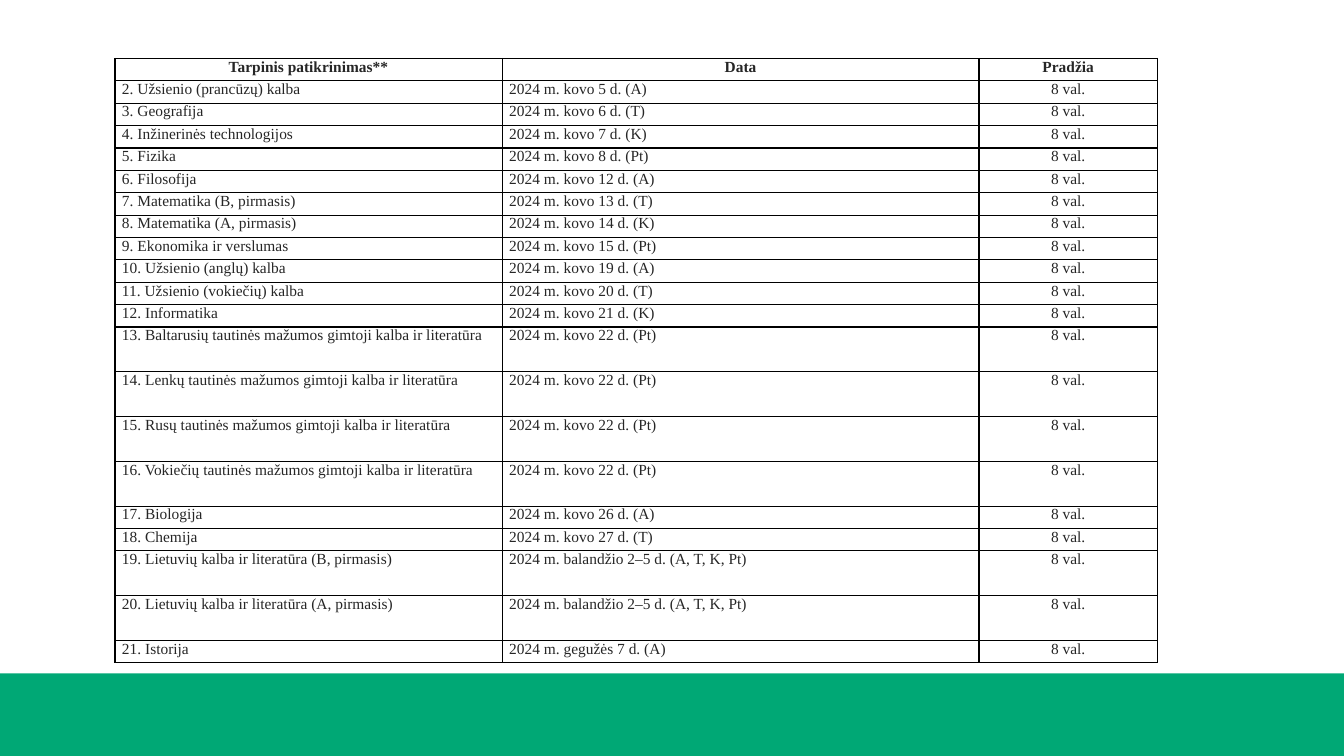
from lxml.etree import SubElement
from pptx import Presentation
from pptx.dml.color import RGBColor
from pptx.enum.shapes import MSO_SHAPE
from pptx.enum.text import PP_ALIGN
from pptx.oxml.ns import qn
from pptx.util import Inches, Pt

GREEN = RGBColor(0x00, 0xA8, 0x75)
INK = RGBColor(0x26, 0x26, 0x26)
BLACK = RGBColor(0x00, 0x00, 0x00)

HEADINGS = ("Tarpinis patikrinimas**", "Data", "Pradžia")
START = "8 val."
FIRST_NUMBER = 2
CHECKS = [
    ("Užsienio (prancūzų) kalba", "kovo 5 d. (A)"),
    ("Geografija", "kovo 6 d. (T)"),
    ("Inžinerinės technologijos", "kovo 7 d. (K)"),
    ("Fizika", "kovo 8 d. (Pt)"),
    ("Filosofija", "kovo 12 d. (A)"),
    ("Matematika (B, pirmasis)", "kovo 13 d. (T)"),
    ("Matematika (A, pirmasis)", "kovo 14 d. (K)"),
    ("Ekonomika ir verslumas", "kovo 15 d. (Pt)"),
    ("Užsienio (anglų) kalba", "kovo 19 d. (A)"),
    ("Užsienio (vokiečių) kalba", "kovo 20 d. (T)"),
    ("Informatika", "kovo 21 d. (K)"),
    ("Baltarusių tautinės mažumos gimtoji kalba ir literatūra", "kovo 22 d. (Pt)"),
    ("Lenkų tautinės mažumos gimtoji kalba ir literatūra", "kovo 22 d. (Pt)"),
    ("Rusų tautinės mažumos gimtoji kalba ir literatūra", "kovo 22 d. (Pt)"),
    ("Vokiečių tautinės mažumos gimtoji kalba ir literatūra", "kovo 22 d. (Pt)"),
    ("Biologija", "kovo 26 d. (A)"),
    ("Chemija", "kovo 27 d. (T)"),
    ("Lietuvių kalba ir literatūra (B, pirmasis)", "balandžio 2–5 d. (A, T, K, Pt)"),
    ("Lietuvių kalba ir literatūra (A, pirmasis)", "balandžio 2–5 d. (A, T, K, Pt)"),
    ("Istorija", "gegužės 7 d. (A)"),
]


class ScheduleSlide:
    """Holds the text style and the slide being filled."""

    font_name = "Times New Roman"
    font_size = Pt(11)
    side_margin = Inches(0.07)
    border_width = Pt(1)

    def __init__(self, slide):
        self.slide = slide

    def band(self, left, top, width, height, color):
        band = self.slide.shapes.add_shape(MSO_SHAPE.RECTANGLE, left, top, width, height)
        band.shadow.inherit = False
        band.fill.solid()
        band.fill.fore_color.rgb = color
        band.line.fill.background()

    def table(self, left, top, rows, widths, heights):
        table = self.slide.shapes.add_table(
            len(rows), len(widths), left, top, sum(widths), sum(heights)).table
        table.horz_banding = False
        for column, width in zip(table.columns, widths):
            column.width = width
        for index, (row, height, texts) in enumerate(zip(table.rows, heights, rows)):
            row.height = height
            for column, (cell, text) in enumerate(zip(row.cells, texts)):
                is_heading = index == 0
                centred = is_heading or column == len(widths) - 1
                self.cell(cell, text, is_heading, centred)

    def cell(self, cell, text, bold, centred):
        cell.margin_left = cell.margin_right = self.side_margin
        cell.margin_top = cell.margin_bottom = 0
        self.borders(cell)
        cell.fill.background()
        cell.text = text
        paragraph = cell.text_frame.paragraphs[0]
        paragraph.alignment = PP_ALIGN.CENTER if centred else PP_ALIGN.LEFT
        font = paragraph.font
        font.name = self.font_name
        font.size = self.font_size
        font.bold = bold
        font.color.rgb = INK

    def borders(self, cell):
        properties = cell._tc.get_or_add_tcPr()
        for side in ("a:lnL", "a:lnR", "a:lnT", "a:lnB"):
            line = SubElement(properties, qn(side), w=str(self.border_width))
            fill = SubElement(line, qn("a:solidFill"))
            SubElement(fill, qn("a:srgbClr"), val=str(BLACK))


def main():
    deck = Presentation()
    deck.slide_width, deck.slide_height = Inches(13.33), Inches(7.5)
    blank = deck.slide_layouts[6]
    schedule = ScheduleSlide(deck.slides.add_slide(blank))

    band_top = Inches(6.68)
    schedule.band(0, band_top, deck.slide_width, deck.slide_height - band_top, GREEN)

    rows = [HEADINGS] + [
        (f"{number}. {subject}", f"2024 m. {date}", START)
        for number, (subject, date) in enumerate(CHECKS, FIRST_NUMBER)
    ]
    # Language and literature rows are two lines high
    lines = [2 if "literatūra" in row[0] else 1 for row in rows]
    line_height = Inches(6) // sum(lines)
    schedule.table(
        Inches(1.14), Inches(0.58), rows,
        widths=[Inches(width) for width in (3.84, 4.73, 1.77)],
        heights=[count * line_height for count in lines])

    deck.save("out.pptx")


if __name__ == "__main__":
    main()
